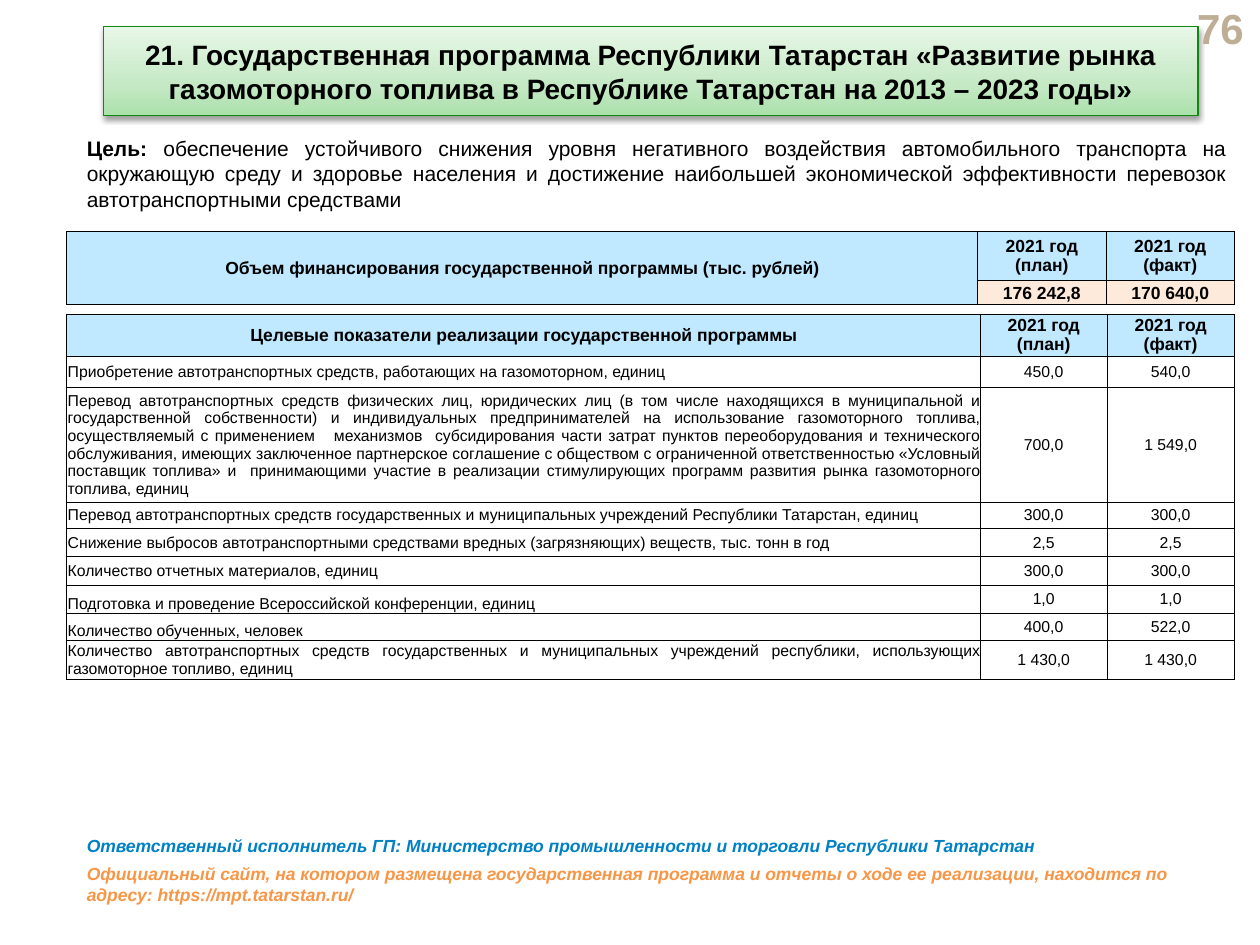
from typing import NamedTuple

from pptx import Presentation
from pptx.dml.color import RGBColor
from pptx.enum.text import MSO_ANCHOR as Anchor, MSO_AUTO_SIZE as Fit, PP_ALIGN as Align
from pptx.oxml import parse_xml
from pptx.util import Pt

FONT = "Arial"
BLACK = RGBColor(0x00, 0x00, 0x00)
SKY = RGBColor(0xC0, 0xE9, 0xFF)
PEACH = RGBColor(0xFD, 0xEA, 0xDA)
BLUE = RGBColor(0x00, 0x81, 0xC5)
ORANGE = RGBColor(0xF7, 0x96, 0x46)
TAN = RGBColor(0xBF, 0xAE, 0x96)
GREEN = RGBColor(0x10, 0x88, 0x12)
STOPS = ((0, "ABE1AB"), (35, "C5E9C5"), (100, "E8F7E8"))
NS = 'xmlns:a="http://schemas.openxmlformats.org/drawingml/2006/main"'


class Note(NamedTuple):
    box: tuple
    text: str
    size: float
    color: RGBColor
    align: Align = Align.LEFT
    anchor: Anchor = Anchor.TOP
    italic: bool = False


class Goal(NamedTuple):
    name: str
    plan: str
    fact: str
    height: float
    anchor: Anchor = Anchor.MIDDLE


class Look(NamedTuple):
    size: float
    bold: bool
    fill: RGBColor | None
    side: float
    top: float = 0


HEAD = Look(10, True, SKY, 4.5)
SUM = Look(10, True, PEACH, 0.6, 0.6)
BODY = Look(9, False, None, 0.6, 0.6)

TITLE = ("21. Государственная программа Республики Татарстан «Развитие рынка "
         "газомоторного топлива в Республике Татарстан на 2013 – 2023 годы»")
AIM = ("обеспечение устойчивого снижения уровня негативного воздействия автомобильного "
       "транспорта на окружающую среду и здоровье населения и достижение наибольшей "
       "экономической эффективности перевозок автотранспортными средствами")

NOTES = (
    Note((671.8, 3.6, 46, 24.5), "76", 24, TAN, Align.RIGHT, Anchor.MIDDLE),
    Note((42.5, 473.8, 658, 19.4),
         "Ответственный исполнитель ГП: Министерство промышленности и торговли "
         "Республики Татарстан", 10, BLUE, italic=True),
    Note((42.5, 489.6, 666, 31.7),
         "Официальный сайт, на котором размещена государственная программа и отчеты о ходе "
         "ее реализации, находится по адресу: https://mpt.tatarstan.ru/",
         10, ORANGE, italic=True),
)

GOALS = (
    Goal("Приобретение автотранспортных средств, работающих на газомоторном, единиц",
         "450,0", "540,0", 17.7),
    Goal("Перевод автотранспортных средств физических лиц, юридических лиц (в том числе "
         "находящихся в муниципальной и государственной собственности) и индивидуальных "
         "предпринимателей на использование газомоторного топлива, осуществляемый с "
         "применением   механизмов  субсидирования части затрат пунктов переоборудования и "
         "технического обслуживания, имеющих заключенное партнерское соглашение с обществом "
         "с ограниченной ответственностью «Условный поставщик топлива» и  принимающими "
         "участие в реализации стимулирующих программ развития рынка газомоторного топлива, "
         "единиц", "700,0", "1 549,0", 65.7),
    Goal("Перевод автотранспортных средств государственных и муниципальных учреждений "
         "Республики Татарстан, единиц", "300,0", "300,0", 14.9),
    Goal("Снижение выбросов автотранспортными средствами вредных (загрязняющих) веществ, "
         "тыс. тонн в год", "2,5", "2,5", 16),
    Goal("Количество отчетных материалов, единиц", "300,0", "300,0", 16.6),
    Goal("Подготовка и проведение Всероссийской конференции, единиц", "1,0", "1,0",
         16, Anchor.BOTTOM),
    Goal("Количество обученных, человек", "400,0", "522,0", 15.4, Anchor.BOTTOM),
    Goal("Количество автотранспортных средств государственных и муниципальных учреждений "
         "республики, использующих газомоторное топливо, единиц",
         "1 430,0", "1 430,0", 21.7),
)


def set_font(para, size: float, color: RGBColor, bold: bool | None = True,
             italic: bool = False) -> None:
    font = para.font
    font.name, font.size, font.bold, font.italic = FONT, Pt(size), bold, italic
    font.color.rgb = color


def add_note(slide, note: Note):
    shape = slide.shapes.add_textbox(*map(Pt, note.box))
    frame = shape.text_frame
    frame.word_wrap = True
    frame.vertical_anchor = note.anchor
    para = frame.paragraphs[0]
    para.text, para.alignment = note.text, note.align
    set_font(para, note.size, note.color, italic=note.italic)
    return para


def add_title(slide) -> None:
    """Turn the title placeholder into a rounded green banner."""
    shape = slide.shapes.title
    shape.left, shape.top, shape.width, shape.height = map(Pt, (59, 15.1, 625.7, 51.1))
    stops = "".join(f'<a:gs pos="{pos * 1000}"><a:srgbClr val="{rgb}"/></a:gs>'
                    for pos, rgb in STOPS)
    props = shape.element.spPr
    for xml in (
        f'<a:prstGeom {NS} prst="roundRect"><a:avLst/></a:prstGeom>',
        f'<a:gradFill {NS} rotWithShape="1"><a:gsLst>{stops}</a:gsLst>'
        '<a:lin ang="16200000" scaled="0"/></a:gradFill>',
    ):
        props.append(parse_xml(xml))
    shape.line.color.rgb = GREEN
    shape.line.width = Pt(0.75)
    props.append(parse_xml(
        f'<a:effectLst {NS}><a:outerShdw blurRad="{Pt(3.1)}" dist="{Pt(1.6)}" dir="5400000" '
        'rotWithShape="0"><a:srgbClr val="000000"><a:alpha val="38000"/></a:srgbClr>'
        '</a:outerShdw></a:effectLst>'))
    frame = shape.text_frame
    frame.auto_size = Fit.NONE
    frame.vertical_anchor = Anchor.MIDDLE
    para = frame.paragraphs[0]
    para.text, para.alignment = TITLE, Align.CENTER
    set_font(para, 16, BLACK)


def add_grid(slide, left: float, top: float, cols: tuple, rows: tuple):
    frame = slide.shapes.add_table(len(rows), len(cols), Pt(left), Pt(top),
                                   Pt(sum(cols)), Pt(sum(rows)))
    table = frame.table
    table.first_row = table.horz_banding = False
    for col, width in zip(table.columns, cols):
        col.width = Pt(width)
    for row, height in zip(table.rows, rows):
        row.height = Pt(height)
    return table


def fill_cell(cell, text: str, look: Look, align: Align = Align.CENTER,
              anchor: Anchor = Anchor.MIDDLE) -> None:
    cell.margin_left = cell.margin_right = Pt(look.side)
    cell.margin_top, cell.margin_bottom = Pt(look.top), 0
    cell.vertical_anchor = anchor
    cell.text = text
    for para in cell.text_frame.paragraphs:
        para.alignment = align
        set_font(para, look.size, BLACK, look.bold)
    props = cell._tc.get_or_add_tcPr()
    for spot, edge in enumerate("LRTB"):
        props.insert(spot, parse_xml(
            f'<a:ln{edge} {NS} w="{Pt(0.25)}"><a:solidFill><a:srgbClr val="{BLACK}"/>'
            f'</a:solidFill></a:ln{edge}>'))
    if look.fill is None:
        cell.fill.background()
    else:
        cell.fill.solid()
        cell.fill.fore_color.rgb = look.fill


def add_funds(slide) -> None:
    table = add_grid(slide, 38.1, 132.2, (520.5, 73.4, 73.4), (28, 13.9))
    rows = (
        (HEAD, ("Объем финансирования государственной программы (тыс. рублей)",
                "2021 год\n(план)", "2021 год\n(факт)")),
        (SUM, ("", "176 242,8", "170 640,0")),
    )
    for y, (look, texts) in enumerate(rows):
        for x, text in enumerate(texts):
            fill_cell(table.cell(y, x), text, look)
    table.cell(0, 0).merge(table.cell(1, 0))


def add_goals(slide) -> None:
    heights = (24, *(goal.height for goal in GOALS))
    table = add_grid(slide, 38.1, 179.4, (522.2, 72.2, 72.9), heights)
    heads = ("Целевые показатели реализации государственной программы",
             "2021 год (план)", "2021 год (факт)")
    for x, text in enumerate(heads):
        fill_cell(table.cell(0, x), text, HEAD)
    for y, goal in enumerate(GOALS, 1):
        fill_cell(table.cell(y, 0), goal.name, BODY, Align.JUSTIFY, goal.anchor)
        fill_cell(table.cell(y, 1), goal.plan, BODY)
        fill_cell(table.cell(y, 2), goal.fact, BODY)


def main() -> None:
    deck = Presentation()
    deck.slide_width, deck.slide_height = Pt(720), Pt(540)
    slide = deck.slides.add_slide(deck.slide_layouts[5])
    add_title(slide)
    for note in NOTES:
        add_note(slide, note)
    para = add_note(slide, Note((42.5, 73.6, 666, 51), "Цель: ", 12, BLACK,
                                Align.JUSTIFY, Anchor.MIDDLE))
    run = para.add_run()
    run.text, run.font.bold = AIM, False
    add_funds(slide)
    add_goals(slide)
    deck.save("out.pptx")


if __name__ == "__main__":
    main()
